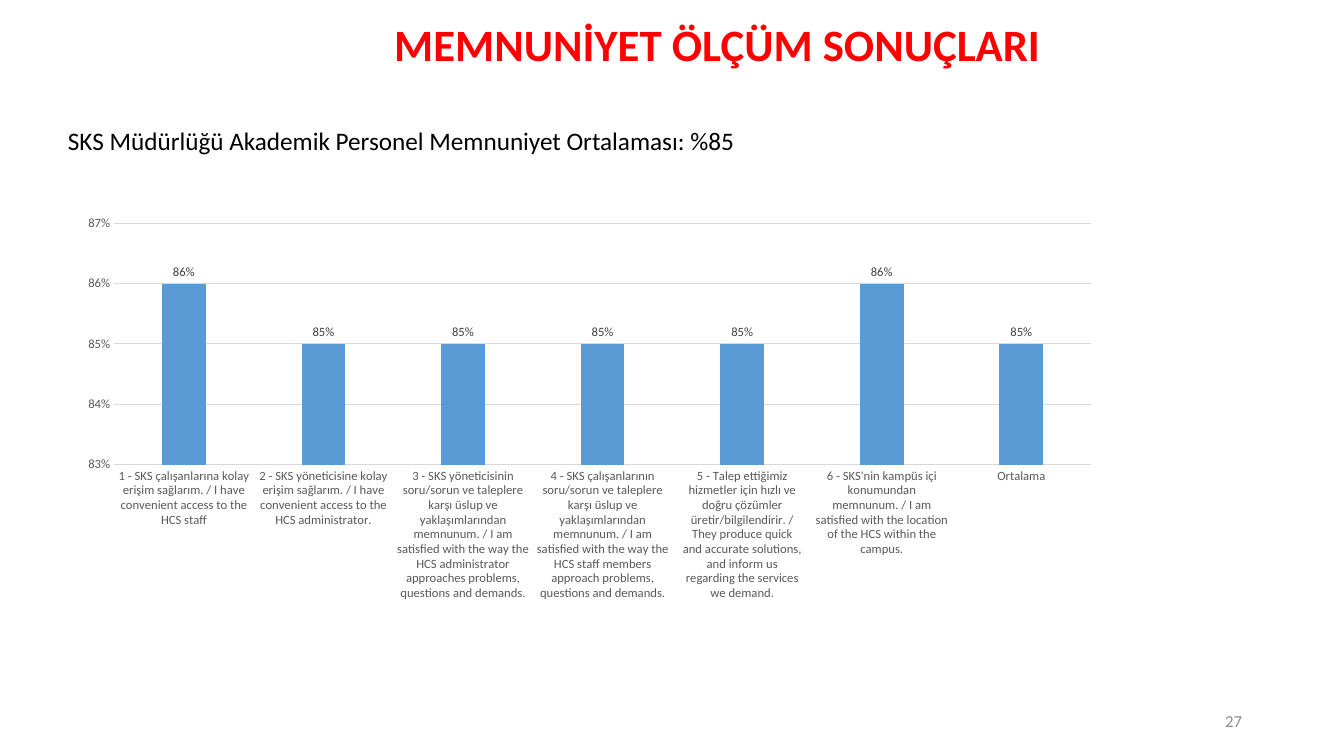
from lxml import etree
from pptx import Presentation
from pptx.chart.data import CategoryChartData
from pptx.dml.color import RGBColor
from pptx.enum.chart import XL_CHART_TYPE, XL_LABEL_POSITION, XL_TICK_MARK
from pptx.enum.text import MSO_ANCHOR, PP_ALIGN
from pptx.oxml.ns import qn
from pptx.util import Emu, Pt

COLUMN = XL_CHART_TYPE.COLUMN_CLUSTERED
OUTSIDE_END = XL_LABEL_POSITION.OUTSIDE_END
NO_TICK = XL_TICK_MARK.NONE
LEFT, CENTER, RIGHT = PP_ALIGN.LEFT, PP_ALIGN.CENTER, PP_ALIGN.RIGHT
TOP, MIDDLE = MSO_ANCHOR.TOP, MSO_ANCHOR.MIDDLE

PX = 914400 / 100.8
THEME = {
    "font": "Calibri",
    "title": {"size": 32, "color": "FF0000", "bold": True},
    "summary": {"size": 18, "color": "000000", "bold": False},
    "number": {"size": 12, "color": "8C8C8C", "bold": False},
    "chart": {"size": 10, "color": "000000", "bold": False},
    "axis": {"size": 9, "color": "595959", "bold": False},
    "label": {"size": 9, "color": "404040", "bold": False},
    "grid": "D9D9D9",
    "bar": "5B9BD5",
}


def px(*lengths):
    return [Emu(round(n * PX)) for n in lengths]


def set_font(font, style):
    fmt = THEME[style]
    values = {"name": THEME["font"], "size": Pt(fmt["size"]), "bold": fmt["bold"]}
    for name, value in values.items():
        setattr(font, name, value)
    font.color.rgb = RGBColor.from_string(fmt["color"])


# Slide
prs = Presentation()
prs.slide_width, prs.slide_height = px(1344, 756)
s = prs.slides.add_slide(prs.slide_layouts[5])

# Title, summary line and page number
title = s.shapes.title
title.left, title.top, title.width, title.height = px(269, 12, 897, 65)
summary = s.shapes.add_textbox(*px(58, 120, 1078, 40))
number = s.shapes.add_textbox(*px(950, 701, 302, 40))
for sp, text, style, align, anchor in [
    (title, "MEMNUNİYET ÖLÇÜM SONUÇLARI", "title", CENTER, TOP),
    (summary, "SKS Müdürlüğü Akademik Personel Memnuniyet Ortalaması: %85",
     "summary", LEFT, TOP),
    (number, "27", "number", RIGHT, MIDDLE),
]:
    tf = sp.text_frame
    tf.word_wrap = True
    tf.vertical_anchor = anchor
    p = tf.paragraphs[0]
    p.alignment = align
    r = p.add_run()
    r.text = text
    set_font(r.font, style)

# Chart data
scores = [
    ("1 - SKS çalışanlarına kolay erişim sağlarım. / I have convenient access "
     "to the HCS staff", 0.86),
    ("2 - SKS yöneticisine kolay erişim sağlarım. / I have convenient access "
     "to the HCS administrator.", 0.85),
    ("3 - SKS yöneticisinin soru/sorun ve taleplere karşı üslup ve "
     "yaklaşımlarından memnunum. / I am satisfied with the way the HCS "
     "administrator approaches problems, questions and demands.", 0.85),
    ("4 - SKS çalışanlarının soru/sorun ve taleplere karşı üslup ve "
     "yaklaşımlarından memnunum. / I am satisfied with the way the HCS staff "
     "members approach problems, questions and demands.", 0.85),
    ("5 - Talep ettiğimiz hizmetler için hızlı ve doğru çözümler "
     "üretir/bilgilendirir. / They produce quick and accurate solutions, and "
     "inform us regarding the services we demand.", 0.85),
    ("6 - SKS'nin kampüs içi konumundan memnunum. / I am satisfied with the "
     "location of the HCS within the campus.", 0.86),
    ("Ortalama", 0.85),
]
data = CategoryChartData(number_format="0%")
data.categories = [question for question, score in scores]
data.add_series("Series 1", [score for question, score in scores])

# Column chart
chart = s.shapes.add_chart(COLUMN, *px(58, 169, 1193, 531), data).chart
chart.has_title = False
chart.has_legend = False
set_font(chart.font, "chart")
plot = chart.plots[0]
plot.gap_width = 219
plot.overlap = -27
plot.vary_by_categories = False
bars = plot.series[0].format.fill
bars.solid()
bars.fore_color.rgb = RGBColor.from_string(THEME["bar"])

# Data labels
plot.has_data_labels = True
labels = plot.data_labels
for name, value in {"show_value": True, "position": OUTSIDE_END,
                    "number_format": "0%",
                    "number_format_is_linked": False}.items():
    setattr(labels, name, value)
set_font(labels.font, "label")

# Axes
cat_axis, val_axis = chart.category_axis, chart.value_axis
for axis in (cat_axis, val_axis):
    axis.major_tick_mark = NO_TICK
    axis.minor_tick_mark = NO_TICK
    set_font(axis.tick_labels.font, "axis")
for name, value in {"minimum_scale": 0.83, "maximum_scale": 0.87,
                    "major_unit": 0.01, "has_major_gridlines": True}.items():
    setattr(val_axis, name, value)
val_axis.tick_labels.number_format = "0%"
val_axis.tick_labels.number_format_is_linked = False
val_axis.format.line.fill.background()
for line in (cat_axis.format.line, val_axis.major_gridlines.format.line):
    line.color.rgb = RGBColor.from_string(THEME["grid"])
    line.width = Pt(0.75)

# Fixed plot area inside the chart frame
area = chart._chartSpace.chart.plotArea
for old in area.findall(qn("c:layout")):
    area.remove(old)
layout = etree.Element(qn("c:layout"))
area.insert(0, layout)
manual = etree.SubElement(layout, qn("c:manualLayout"))
for tag, value in [("layoutTarget", "inner"), ("xMode", "edge"), ("yMode", "edge"),
                   ("x", "0.047"), ("y", "0.102"), ("w", "0.819"), ("h", "0.455")]:
    etree.SubElement(manual, qn("c:" + tag)).set("val", value)

prs.save("out.pptx")
